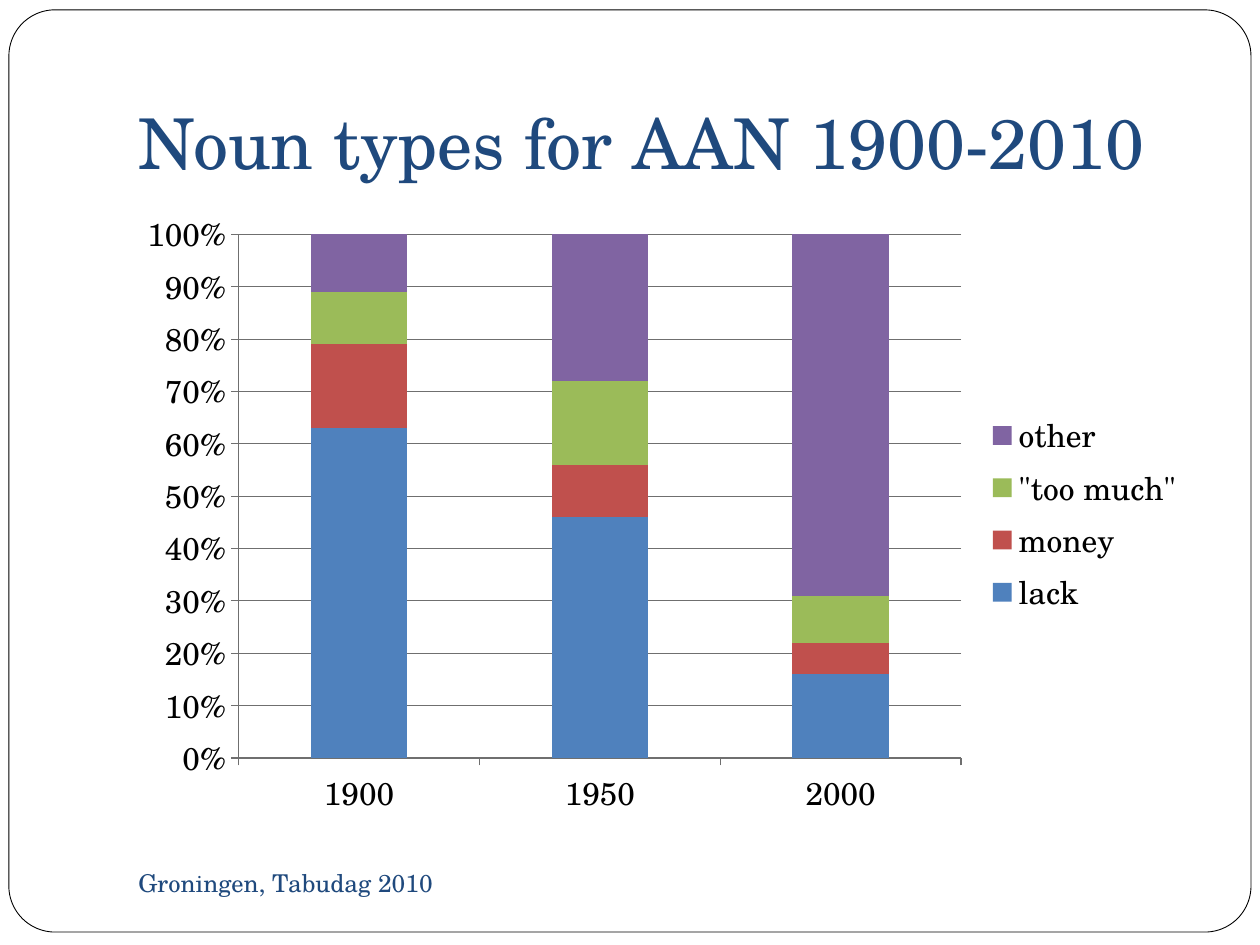
from typing import NamedTuple

from pptx import Presentation
from pptx import util as u
from pptx.chart.data import CategoryChartData
from pptx.dml.color import RGBColor
from pptx.enum import chart as ch
from pptx.enum import shapes, text

FONT = "TeX Gyre Schola"
COLORS = {
    "paper": "FFFFFF",
    "ink": "000000",
    "navy": "1F497D",
    "axis": "6F6F6F",
    "lack": "4F81BD",
    "money": "C0504D",
    '"too much"': "9BBB59",
    "other": "8064A2",
}


class Box(NamedTuple):
    left: float
    top: float
    width: float
    height: float

    def cm(self) -> list:
        return [u.Cm(v) for v in self]


class Label(NamedTuple):
    box: Box
    words: str
    size: int
    anchor: text.MSO_ANCHOR
    bottom: float


class NounType(NamedTuple):
    name: str
    shares: tuple


YEARS = ("1900", "1950", "2000")
NOUN_TYPES = (
    NounType("lack", (63, 46, 16)),
    NounType("money", (16, 10, 6)),
    NounType('"too much"', (10, 16, 9)),
    NounType("other", (11, 28, 69)),
)
LABELS = (
    Label(Box(2.54, 0.76, 21.59, 3.18), "Noun types for AAN 1900-2010", 40,
          text.MSO_ANCHOR.BOTTOM, 0.25),
    Label(Box(2.54, 17.15, 11, 1.27), "Groningen, Tabudag 2010", 14,
          text.MSO_ANCHOR.MIDDLE, 0.13),
)


def rgb(name: str) -> RGBColor:
    return RGBColor.from_string(COLORS[name])


def set_all(obj, values: dict) -> None:
    for key, value in values.items():
        setattr(obj, key, value)


def style_font(font, size: int, color: str) -> None:
    set_all(font, {"name": FONT, "size": u.Pt(size), "bold": False})
    font.color.rgb = rgb(color)


def paint(sp, color: str) -> None:
    sp.fill.solid()
    sp.fill.fore_color.rgb = rgb(color)


def draw_line(line, color: str, width: float) -> None:
    line.color.rgb = rgb(color)
    line.width = u.Pt(width)


def add_frame(s, box: Box) -> None:
    sp = s.shapes.add_shape(shapes.MSO_SHAPE.ROUNDED_RECTANGLE, *box.cm())
    sp.adjustments[0] = 0.05
    sp.shadow.inherit = False
    paint(sp, "paper")
    draw_line(sp.line, "ink", 0.5)


def add_label(s, label: Label) -> None:
    tf = s.shapes.add_textbox(*label.box.cm()).text_frame
    set_all(tf, {
        "word_wrap": True,
        "vertical_anchor": label.anchor,
        "margin_left": u.Cm(0.25),
        "margin_right": u.Cm(0.25),
        "margin_top": u.Cm(0.13),
        "margin_bottom": u.Cm(label.bottom),
    })
    r = tf.paragraphs[0].add_run()
    r.text = label.words
    style_font(r.font, label.size, "navy")


def add_share_chart(s, box: Box) -> None:
    data = CategoryChartData(number_format="0")
    data.categories = YEARS
    for noun in NOUN_TYPES:
        data.add_series(noun.name, noun.shares)
    chart = s.shapes.add_chart(
        ch.XL_CHART_TYPE.COLUMN_STACKED_100, *box.cm(), data).chart
    style_font(chart.font, 18, "ink")
    chart.has_title = False

    # Columns
    plot = chart.plots[0]
    set_all(plot, {"gap_width": 150, "overlap": 100, "vary_by_categories": False})
    for series in plot.series:
        paint(series.format, series.name)

    # Axes
    for axis in (chart.category_axis, chart.value_axis):
        axis.major_tick_mark = ch.XL_TICK_MARK.OUTSIDE
        draw_line(axis.format.line, "axis", 0.75)
    values = chart.value_axis
    set_all(values, {"minimum_scale": 0, "maximum_scale": 1, "major_unit": 0.1,
                     "has_major_gridlines": True})
    set_all(values.tick_labels, {"number_format": "0%",
                                 "number_format_is_linked": False})
    draw_line(values.major_gridlines.format.line, "axis", 0.75)

    # Legend
    chart.has_legend = True
    set_all(chart.legend, {"position": ch.XL_LEGEND_POSITION.RIGHT,
                           "include_in_layout": False})


def main() -> None:
    prs = Presentation()
    set_all(prs, {"slide_width": u.Cm(25.4), "slide_height": u.Cm(19.05)})
    s = prs.slides.add_slide(prs.slide_layouts[6])
    add_frame(s, Box(0.18, 0.2, 25.04, 18.59))
    for label in LABELS:
        add_label(s, label)
    add_share_chart(s, Box(2.54, 4.01, 21.59, 12.7))
    prs.save("out.pptx")


if __name__ == "__main__":
    main()
